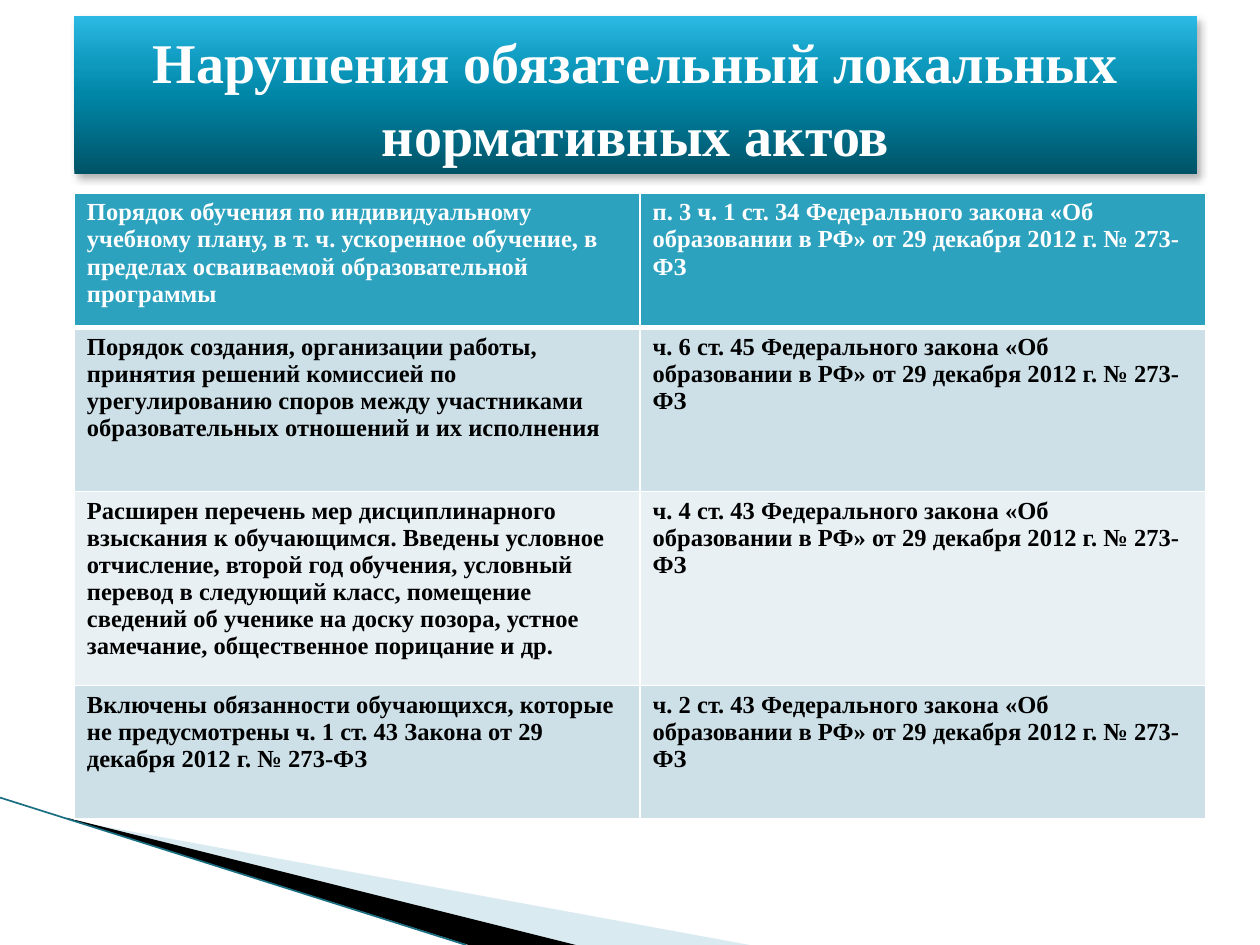
from lxml import etree
from pptx import Presentation
from pptx.dml.color import RGBColor
from pptx.enum.shapes import MSO_CONNECTOR
from pptx.enum.text import MSO_ANCHOR, MSO_AUTO_SIZE, PP_ALIGN
from pptx.oxml import parse_xml
from pptx.oxml.ns import nsdecls, qn
from pptx.util import Inches, Pt

STRAIGHT = MSO_CONNECTOR.STRAIGHT
CENTER = PP_ALIGN.CENTER
MIDDLE = MSO_ANCHOR.MIDDLE
NO_FIT = MSO_AUTO_SIZE.NONE
CELL = Inches(0.1)  # the slide is a grid of 100 columns by 75 rows

COLORS = {
    "white": "FFFFFF",
    "black": "000000",
    "header": "2DA2BF",
    "band": "CDE0E8",
    "light_band": "E8F0F4",
    "pale_wedge": "A0CBDC",
    "edge": "1A6E82",
}
TITLE_STOPS = [(0, "005367"), (50, "0086A7"), (70, "0E9ABE"), (100, "2CB9E3")]

LAW = "Федерального закона «Об образовании в РФ» от 29 декабря 2012 г. № 273-ФЗ"
# violation, article of the law, row height
VIOLATIONS = [
    ("Порядок обучения по индивидуальному учебному плану, в т. ч. ускоренное "
     "обучение, в пределах осваиваемой образовательной программы",
     "п. 3 ч. 1 ст. 34", 10.7),
    ("Порядок создания, организации работы, принятия решений комиссией по "
     "урегулированию споров между участниками образовательных отношений и их "
     "исполнения",
     "ч. 6 ст. 45", 13),
    ("Расширен перечень мер дисциплинарного взыскания к обучающимся. Введены "
     "условное отчисление, второй год обучения, условный перевод в следующий "
     "класс, помещение сведений об ученике на доску позора, устное замечание, "
     "общественное порицание и др.",
     "ч. 4 ст. 43", 15.4),
    ("Включены обязанности обучающихся, которые не предусмотрены ч. 1 ст. 43 "
     "Закона от 29 декабря 2012 г. № 273-ФЗ",
     "ч. 2 ст. 43", 10.6),
]


def grid(*cells):
    return [round(cell * CELL) for cell in cells]


def color(name):
    return RGBColor.from_string(COLORS[name])


class SlideBuilder:
    """Holds the text style and the current slide."""

    font = "Times New Roman"

    def __init__(self, page):
        self.page = page

    def add_text(self, frame, text, size, color_name):
        paragraph = frame.paragraphs[0]
        span = paragraph.add_run()
        span.text = text
        span.font.name = self.font
        span.font.size = Pt(size)
        span.font.bold = True
        span.font.color.rgb = color(color_name)
        return paragraph

    def title(self, text, *place):
        box = self.page.shapes.title
        box.left, box.top, box.width, box.height = grid(*place)
        stops = "".join(
            f'<a:gs pos="{share * 1000}"><a:srgbClr val="{value}"/></a:gs>'
            for share, value in TITLE_STOPS)
        properties = box.element.spPr
        properties.append(parse_xml(
            f'<a:gradFill {nsdecls("a")} rotWithShape="1"><a:gsLst>{stops}</a:gsLst>'
            '<a:lin ang="16200000" scaled="0"/></a:gradFill>'))
        properties.append(parse_xml(
            f'<a:effectLst {nsdecls("a")}><a:outerShdw blurRad="{Pt(4.5)}" '
            f'dist="{Pt(2.6)}" dir="3180000" algn="tl" rotWithShape="0">'
            f'<a:srgbClr val="{COLORS["black"]}"><a:alpha val="30000"/></a:srgbClr>'
            '</a:outerShdw></a:effectLst>'))
        frame = box.text_frame
        frame.word_wrap = True
        frame.auto_size = NO_FIT
        frame.vertical_anchor = MIDDLE
        paragraph = self.add_text(frame, text, 32, "white")
        paragraph.alignment = CENTER
        paragraph.line_spacing = 1.08

    def wedge(self, points, color_name, opacity=100):
        start, *others = [grid(*point) for point in points]
        builder = self.page.shapes.build_freeform(*start)
        builder.add_line_segments(others, close=True)
        shape = builder.convert_to_shape()
        shape.shadow.inherit = False
        shape.line.fill.background()
        shape.fill.solid()
        shape.fill.fore_color.rgb = color(color_name)
        if opacity < 100:
            value = shape.element.spPr.find(".//" + qn("a:srgbClr"))
            etree.SubElement(value, qn("a:alpha")).set("val", str(opacity * 1000))

    def line(self, start, end, color_name, width):
        connector = self.page.shapes.add_connector(STRAIGHT, *grid(*start, *end))
        connector.line.color.rgb = color(color_name)
        connector.line.width = Pt(width)
        etree.SubElement(connector.element.spPr, qn("a:effectLst"))

    def borders(self, cell, top, bottom):
        """Draw white cell borders, 1 point wide at the sides."""
        properties = cell._tc.get_or_add_tcPr()
        widths = {"lnL": 1, "lnR": 1, "lnT": top, "lnB": bottom}
        for index, (side, width) in enumerate(widths.items()):
            properties.insert(index, parse_xml(
                f'<a:{side} {nsdecls("a")} w="{Pt(width)}"><a:solidFill>'
                f'<a:srgbClr val="{COLORS["white"]}"/></a:solidFill></a:{side}>'))

    def table(self, rows, left, top, width):
        height = sum(row[-1] for row in rows)
        table = self.page.shapes.add_table(
            len(rows), 2, *grid(left, top, width, height)).table
        for index, (violation, article, row_height) in enumerate(rows):
            table.rows[index].height = grid(row_height)[0]
            is_header = index == 0
            fill = "header" if is_header else "band" if index % 2 else "light_band"
            for cell, text in zip(table.rows[index].cells,
                                  (violation, f"{article} {LAW}")):
                cell.fill.solid()
                cell.fill.fore_color.rgb = color(fill)
                self.borders(cell, 3 if index == 1 else 1, 3 if is_header else 1)
                self.add_text(cell.text_frame, text, 14,
                              "white" if is_header else "black")


def main():
    deck = Presentation()
    deck.slide_width, deck.slide_height = grid(100, 75)
    slide = SlideBuilder(deck.slides.add_slide(deck.slide_layouts[5]))
    slide.title("Нарушения обязательный локальных нормативных актов",
                5.9, 1.3, 89.1, 12.5)
    slide.wedge([(5.5, 65.1), (59.5, 75), (45.6, 75), (5.5, 65)], "pale_wedge", 40)
    slide.wedge([(5.3, 64.9), (45.7, 75), (37.2, 75), (5.4, 65)], "black")
    slide.line((0, 63.3), (37, 75), "edge", 0.95)
    slide.table(VIOLATIONS, 5.9, 15.3, 89.8)
    deck.save("out.pptx")


if __name__ == "__main__":
    main()
